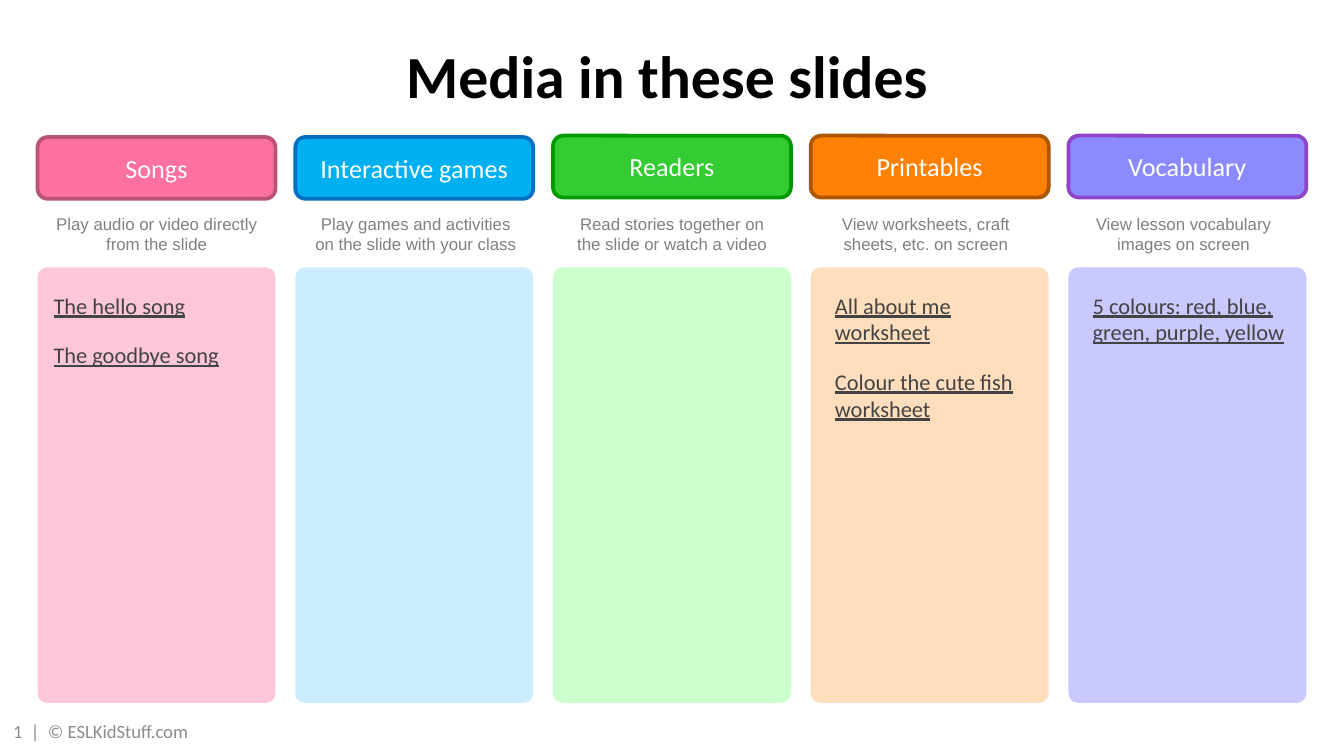
import pptx
import pptx.util
import pptx.dml.color
import pptx.enum.shapes
import pptx.enum.text

Inches = pptx.util.Inches
Align = pptx.enum.text.PP_ALIGN
Anchor = pptx.enum.text.MSO_ANCHOR
Fit = pptx.enum.text.MSO_AUTO_SIZE

TITLE = "Media in these slides"
FOOTER = "1  |  © ESLKidStuff.com"
COLUMNS = [
    dict(name="Songs", hint="Play audio or video directly from the slide",
         items=["The hello song", "The goodbye song"],
         pad=0.1, shift=0.03, top=1.02),
    dict(name="Interactive games",
         hint="Play games and activities on the slide with your class",
         items=[], pad=0.1, shift=0.04, top=1.02),
    dict(name="Readers",
         hint="Read stories together on the slide or watch a video",
         items=[], pad=0.1, shift=0.03, top=1.01),
    dict(name="Printables", hint="View worksheets, craft sheets, etc. on screen",
         items=["All about me worksheet", "Colour the cute fish worksheet"],
         pad=0.16, shift=0, top=1.01),
    dict(name="Vocabulary", hint="View lesson vocabulary images on screen",
         items=["5 colours: red, blue, green, purple, yellow"],
         pad=0.16, shift=0, top=1.01),
]
COLORS = {
    "Songs": ("FC70A2", "BA5378", "FEC6DA"),
    "Interactive games": ("00B0F0", "0070C0", "CCECFF"),
    "Readers": ("33CC33", "009900", "CCFFCC"),
    "Printables": ("FF8104", "AC5600", "FFDEBD"),
    "Vocabulary": ("8B8BFF", "8F45C7", "C9C9FF"),
    "title": "000000", "footer": "8C8C8C", "head": "FFFFFF",
    "hint": "808080", "item": "434343",
}
FONTS = {
    "title": dict(name="Calibri", size=pptx.util.Pt(32), bold=True),
    "footer": dict(name="Calibri", size=pptx.util.Pt(10)),
    "head": dict(name="Calibri", size=pptx.util.Pt(14)),
    "hint": dict(name="Arial", size=pptx.util.Pt(9)),
    "item": dict(name="Calibri", size=pptx.util.Pt(12), underline=True),
}
FIRST, LAST, WIDTH = 0.28, 7.95, 1.77
STEP = (LAST - FIRST) / (len(COLUMNS) - 1)


def rgb(code):
    return pptx.dml.color.RGBColor.from_string(code)


def apply(thing, values):
    for key, value in values.items():
        setattr(thing, key, value)


def write(shape, lines, kind, align=Align.CENTER, after=0, **frame):
    body = shape.text_frame
    apply(body, dict(word_wrap=True, auto_size=Fit.NONE,
                     vertical_anchor=Anchor.TOP) | frame)
    for i, line in enumerate(lines):
        para = body.paragraphs[0] if i == 0 else body.add_paragraph()
        apply(para, dict(alignment=align, space_after=pptx.util.Pt(after)))
        run = para.add_run()
        run.text = line
        apply(run.font, FONTS[kind])
        run.font.color.rgb = rgb(COLORS[kind])


def panel(slide, box, fill, edge=None):
    shape = slide.shapes.add_shape(
        pptx.enum.shapes.MSO_SHAPE.ROUNDED_RECTANGLE, *map(Inches, box))
    shape.shadow.inherit = False
    shape.fill.solid()
    shape.fill.fore_color.rgb = rgb(fill)
    if edge:
        shape.line.color.rgb = rgb(edge)
        shape.line.width = pptx.util.Pt(2)
    else:
        shape.line.fill.background()
    return shape


def label(slide, box):
    return slide.shapes.add_textbox(*map(Inches, box))


def column(slide, index, data):
    left = FIRST + index * STEP
    fill, edge, pale = COLORS[data["name"]]
    card = panel(slide, (left, 1.99, WIDTH, 3.24), pale)
    card.adjustments[0] = 0.04
    write(card, data["items"], "item", Align.LEFT, 12,
          margin_left=Inches(data["pad"]), margin_top=Inches(0.16))
    head = panel(slide, (left, data["top"], WIDTH, 0.46), fill, edge)
    write(head, [data["name"]], "head", vertical_anchor=Anchor.MIDDLE)
    hint = label(slide, (left + data["shift"], 1.54, 1.71, 0.4))
    write(hint, [data["hint"]], "hint", auto_size=Fit.SHAPE_TO_FIT_TEXT)


def main():
    deck = pptx.Presentation()
    apply(deck, dict(slide_width=Inches(10),
                     slide_height=Inches(10) * 9 // 16))
    slide = deck.slides.add_slide(deck.slide_layouts[5])
    title = slide.shapes.title
    apply(title, dict(left=Inches(0.34), top=Inches(0.24),
                      width=Inches(9.25), height=Inches(0.54)))
    write(title, [TITLE], "title")
    write(label(slide, (0, 5.29, 2.17, 0.3)), [FOOTER], "footer", Align.LEFT,
          vertical_anchor=Anchor.MIDDLE)
    for index, data in enumerate(COLUMNS):
        column(slide, index, data)
    deck.save("out.pptx")


if __name__ == "__main__":
    main()
